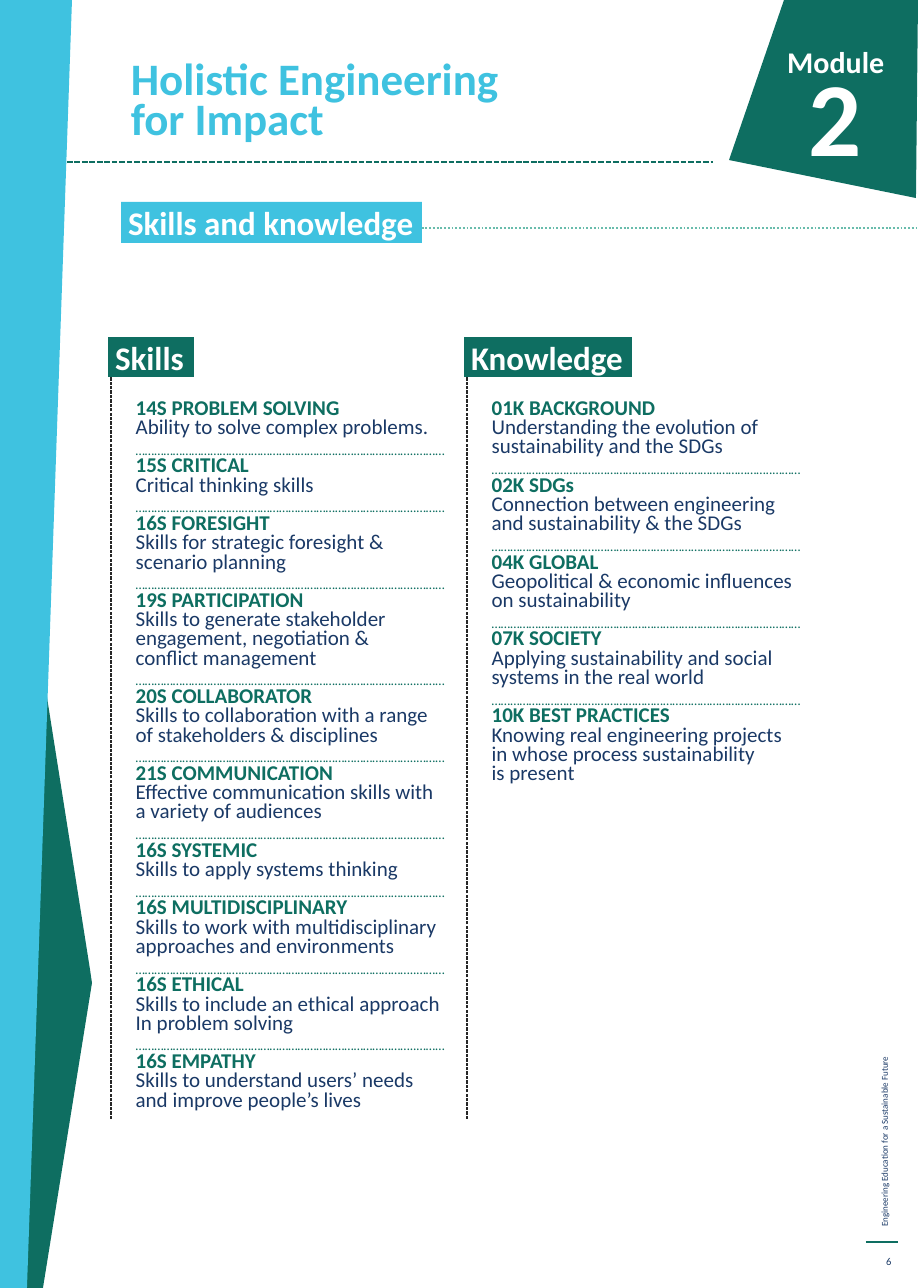
from dataclasses import dataclass

from lxml import etree
from pptx import Presentation
from pptx import util as u
from pptx.dml.color import RGBColor
from pptx.enum import dml, shapes, text
from pptx.oxml.ns import qn

PX = 914400 / 108  # EMU in one px


@dataclass(frozen=True)
class Theme:
    font: str = "Calibri"
    green: str = "0E6E61"
    cyan: str = "3FC2E0"
    mint: str = "69BCAC"
    navy: str = "1A3966"
    black: str = "262626"
    white: str = "FFFFFF"
    number: int = 70
    title: int = 30
    label: int = 22
    module: int = 20
    body: int = 14
    dots: int = 9
    page: int = 7
    side: int = 6
    leading: float = 12.8
    title_leading: float = 26.8


T = Theme()
DOTS = "…………………………….………………………………………………..………"

SKILLS = [
    ("14S PROBLEM SOLVING", ["Ability to solve complex problems."]),
    ("15S CRITICAL", ["Critical thinking skills"]),
    ("16S FORESIGHT", ["Skills for strategic foresight &", "scenario planning"]),
    ("19S PARTICIPATION", ["Skills to generate stakeholder",
                           "engagement, negotiation &", "conflict management"]),
    ("20S COLLABORATOR", ["Skills to collaboration with a range",
                          "of stakeholders & disciplines"]),
    ("21S COMMUNICATION", ["Effective communication skills with",
                           "a variety of audiences"]),
    ("16S SYSTEMIC", ["Skills to apply systems thinking"]),
    ("16S MULTIDISCIPLINARY", ["Skills to work with multidisciplinary",
                               "approaches and environments"]),
    ("16S ETHICAL", ["Skills to include an ethical approach", "In problem solving"]),
    ("16S EMPATHY", ["Skills to understand users’ needs",
                     "and improve people’s lives"]),
]
KNOWLEDGE = [
    ("01K BACKGROUND", ["Understanding the evolution of sustainability and the SDGs"]),
    ("02K SDGs", ["Connection between engineering", "and sustainability & the SDGs"]),
    ("04K GLOBAL", ["Geopolitical & economic influences", "on sustainability"]),
    ("07K SOCIETY", ["Applying sustainability and social systems in the real world"]),
    ("10K BEST PRACTICES", ["Knowing real engineering projects",
                            "in whose process sustainability", "is present"]),
]


def emu(*lengths):
    return [u.Emu(round(n * PX)) for n in lengths]


def rgb(color):
    return RGBColor.from_string(color)


def add_run(p, words, size, color, bold=False):
    r = p.add_run()
    r.text = words
    r.font.name = T.font
    r.font.size = u.Pt(size)
    r.font.bold = bold
    r.font.color.rgb = rgb(color)


def add_text(s, box, words, size, color, bold=False, align=text.PP_ALIGN.LEFT,
             anchor=text.MSO_ANCHOR.TOP):
    sp = s.shapes.add_textbox(*emu(*box))
    tf = sp.text_frame
    tf.word_wrap = True
    tf.vertical_anchor = anchor
    p = tf.paragraphs[0]
    p.alignment = align
    add_run(p, words, size, color, bold)
    return sp


def add_outline(s, points, color):
    start, *rest = points
    builder = s.shapes.build_freeform(*start, scale=PX)
    builder.add_line_segments(rest)
    sp = builder.convert_to_shape()
    sp.shadow.inherit = False
    sp.fill.solid()
    sp.fill.fore_color.rgb = rgb(color)
    sp.line.fill.background()


def add_line(s, ends, color, width, dash=None):
    line = s.shapes.add_connector(shapes.MSO_CONNECTOR.STRAIGHT, *emu(*ends))
    line.line.color.rgb = rgb(color)
    line.line.width = u.Pt(width)
    if dash:
        line.line.dash_style = dash
    etree.SubElement(line._element.spPr, qn("a:effectLst"))


def add_label(s, box, words, color):
    sp = s.shapes.add_shape(shapes.MSO_SHAPE.RECTANGLE, *emu(*box))
    sp.shadow.inherit = False
    sp.fill.solid()
    sp.fill.fore_color.rgb = rgb(color)
    sp.line.fill.background()
    tf = sp.text_frame
    tf.word_wrap = False
    tf.vertical_anchor = text.MSO_ANCHOR.MIDDLE
    tf.margin_left, tf.margin_right, tf.margin_top, tf.margin_bottom = emu(7, 0, 0, 0)
    p = tf.paragraphs[0]
    p.alignment = text.PP_ALIGN.LEFT
    add_run(p, words, T.label, T.white, True)


def add_column(s, left, label, label_width, entries):
    """A labelled list beside a dashed rule, with dots between entries."""
    add_line(s, (left + 3, 1119, left + 3, 350), T.black, 0.75,
             dml.MSO_LINE.SQUARE_DOT)
    add_label(s, (left, 337, label_width, 40), label, T.green)

    rows = []
    for heading, lines in entries:
        if rows:
            rows.append((DOTS, T.dots, T.green, False))
        rows.append((heading, T.body, T.green, True))
        rows += [(line, T.body, T.navy, False) for line in lines]

    sp = s.shapes.add_textbox(*emu(left + 17, 395, 355, 847))
    tf = sp.text_frame
    tf.word_wrap = True
    for i, row in enumerate(rows):
        p = tf.add_paragraph() if i else tf.paragraphs[0]
        p.line_spacing = u.Pt(T.leading)
        add_run(p, *row)


def set_title(s, box, words):
    sp = s.shapes.title
    sp.left, sp.top, sp.width, sp.height = emu(*box)
    tf = sp.text_frame
    tf.word_wrap = True
    tf.auto_size = text.MSO_AUTO_SIZE.NONE
    tf.vertical_anchor = text.MSO_ANCHOR.BOTTOM
    p = tf.paragraphs[0]
    p.alignment = text.PP_ALIGN.LEFT
    p.line_spacing = u.Pt(T.title_leading)
    add_run(p, words, T.title, T.cyan, True)


def main():
    prs = Presentation()
    prs.slide_width, prs.slide_height = emu(918, 1288)
    s = prs.slides.add_slide(prs.slide_layouts[5])
    right = text.PP_ALIGN.RIGHT

    # Side bands
    add_outline(s, [(43, 1288), (25, 1288), (25, 558), (90, 969), (92, 983)], T.green)
    add_outline(s, [(0, 0), (72, 0), (27, 1288), (0, 1288)], T.cyan)

    # Footer
    side = add_text(s, (642, 984, 485, 22),
                    "Engineering Education for a Sustainable Future", T.side, T.navy)
    side.rotation = 270
    add_line(s, (866, 1242, 898, 1242), T.green, 0.75)
    add_text(s, (866, 1246, 36, 31), "6", T.page, T.navy, align=right,
             anchor=text.MSO_ANCHOR.MIDDLE)

    # Header and module badge
    set_title(s, (120, 31, 410, 119), "Holistic Engineering for Impact")
    add_line(s, (67, 162, 713, 162), T.green, 1.25, dml.MSO_LINE.SQUARE_DOT)
    add_outline(s, [(918, 0), (784, 0), (729, 160), (916, 198)], T.green)
    add_text(s, (701, 38, 194, 153), "Module", T.module, T.white, True, right)
    add_text(s, (678, 46, 194, 153), "2", T.number, T.white, True, right)

    # Section heading
    add_line(s, (272, 228, 918, 228), T.mint, 1.25, dml.MSO_LINE.ROUND_DOT)
    add_label(s, (121, 202, 301, 41), "Skills and knowledge", T.cyan)

    # Columns
    add_column(s, 108, "Skills", 86, SKILLS)
    add_column(s, 464, "Knowledge", 168, KNOWLEDGE)

    prs.save("out.pptx")


if __name__ == "__main__":
    main()
